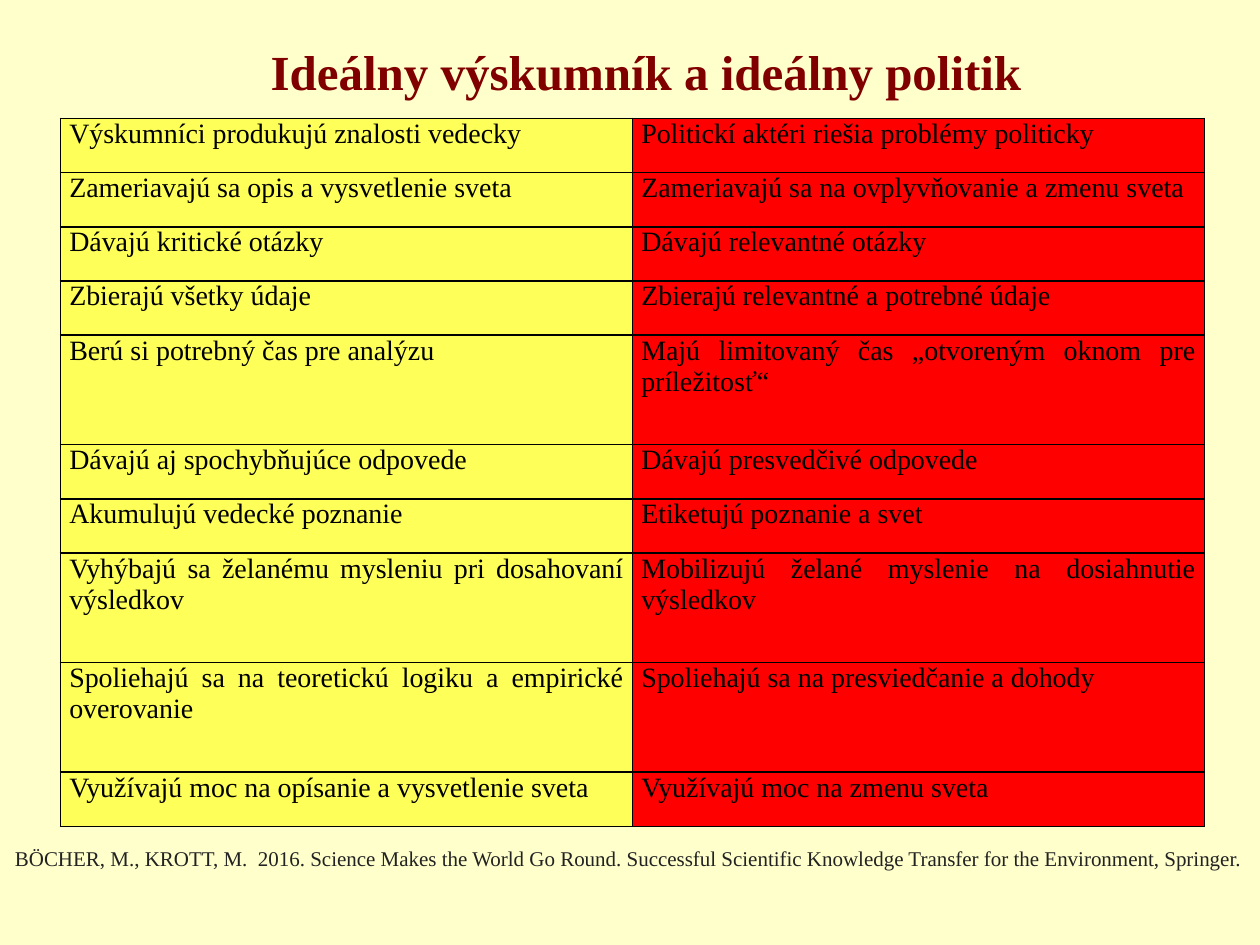
from pptx import Presentation
from pptx.dml.color import RGBColor
from pptx.enum.text import MSO_ANCHOR as Anchor, MSO_AUTO_SIZE as AutoSize, PP_ALIGN as Align
from pptx.oxml.ns import qn
from pptx.util import Inches, Pt
from lxml.etree import SubElement

COLORS = {
    "background": "FFFFCC",
    "title": "800000",
    "source": "222222",
    "text": "000000",
    "border": "000000",
    "researcher": "FFFF59",
    "politician": "FF0000",
}
FONT = "Times New Roman"
COLUMN_FILLS = ("researcher", "politician")
COLUMN_WIDTH = 4.54
ROW_HEIGHT, TALL_ROW_HEIGHT = 0.43, 0.87
TALL_ROWS = {4, 7, 8}

TITLE = "Ideálny výskumník a ideálny politik"
SOURCE = (
    "BÖCHER, M., KROTT, M.  2016. Science Makes the World Go Round. "
    "Successful Scientific Knowledge Transfer for the Environment, Springer."
)
COMPARISON = [
    ("Výskumníci produkujú znalosti vedecky", "Politickí aktéri riešia problémy politicky"),
    ("Zameriavajú sa opis a vysvetlenie sveta", "Zameriavajú sa na ovplyvňovanie a zmenu sveta"),
    ("Dávajú kritické otázky", "Dávajú relevantné otázky"),
    ("Zbierajú všetky údaje", "Zbierajú relevantné a potrebné údaje"),
    ("Berú si potrebný čas pre analýzu", "Majú limitovaný čas „otvoreným oknom pre príležitosť“"),
    ("Dávajú aj spochybňujúce odpovede", "Dávajú presvedčivé odpovede"),
    ("Akumulujú vedecké poznanie", "Etiketujú poznanie a svet"),
    ("Vyhýbajú sa želanému mysleniu pri dosahovaní výsledkov",
     "Mobilizujú želané myslenie na dosiahnutie výsledkov"),
    ("Spoliehajú sa na teoretickú logiku a empirické overovanie",
     "Spoliehajú sa na presviedčanie a dohody"),
    ("Využívajú moc na opísanie a vysvetlenie sveta", "Využívajú moc na zmenu sveta"),
]


def color(name):
    return RGBColor.from_string(COLORS[name])


def set_all(target, values):
    for name, value in values.items():
        setattr(target, name, value)


def write(frame, text, size, color_name, bold=False, align=Align.LEFT):
    para = frame.paragraphs[0]
    para.alignment = align
    span = para.add_run()
    span.text = text
    set_all(span.font, {"name": FONT, "size": Pt(size), "bold": bold})
    span.font.color.rgb = color(color_name)


def add_text(page, place, text, size, color_name, bold=False, **frame_format):
    box = page.shapes.add_textbox(*map(Inches, place))
    set_all(box.text_frame, {"word_wrap": True, **frame_format})
    write(box.text_frame, text, size, color_name, bold)


def add_borders(cell):
    properties = cell._tc.get_or_add_tcPr()
    for position, side in enumerate(("lnL", "lnR", "lnT", "lnB")):
        line = SubElement(properties, qn(f"a:{side}"), w=str(Pt(1)))
        fill = SubElement(line, qn("a:solidFill"))
        SubElement(fill, qn("a:srgbClr"), val=COLORS["border"])
        # Borders come before the fill in the cell properties
        properties.insert(position, line)


def fill_cell(cell, text, fill_name):
    set_all(cell, {
        "margin_left": Inches(0.07), "margin_right": Inches(0.07),
        "margin_top": 0, "margin_bottom": 0, "vertical_anchor": Anchor.TOP,
    })
    cell.fill.solid()
    cell.fill.fore_color.rgb = color(fill_name)
    write(cell.text_frame, text, 16, "text", align=Align.JUSTIFY)
    add_borders(cell)


def add_comparison(page, left, top):
    heights = [TALL_ROW_HEIGHT if i in TALL_ROWS else ROW_HEIGHT for i in range(len(COMPARISON))]
    width = COLUMN_WIDTH * len(COLUMN_FILLS)
    place = map(Inches, (left, top, width, sum(heights)))
    table = page.shapes.add_table(len(COMPARISON), len(COLUMN_FILLS), *place).table
    set_all(table, {"first_row": False, "horz_banding": False})
    for column in table.columns:
        column.width = Inches(COLUMN_WIDTH)
    for row, height, texts in zip(table.rows, heights, COMPARISON):
        row.height = Inches(height)
        for cell, text, fill_name in zip(row.cells, texts, COLUMN_FILLS):
            fill_cell(cell, text, fill_name)


def main():
    deck = Presentation()
    set_all(deck, {"slide_width": Inches(10), "slide_height": Inches(7.5)})
    page = deck.slides.add_slide(deck.slide_layouts[6])
    page.background.fill.solid()
    page.background.fill.fore_color.rgb = color("background")

    # Title
    add_text(page, (2.05, 0.23, 7.88, 0.71), TITLE, 28, "title", bold=True,
             margin_top=Inches(0.1), vertical_anchor=Anchor.TOP)
    # Source of the comparison
    add_text(page, (0.02, 6.66, 10, 0.3), SOURCE, 12, "source",
             auto_size=AutoSize.SHAPE_TO_FIT_TEXT)
    # Researcher and politician side by side
    add_comparison(page, 0.48, 0.94)

    deck.save("out.pptx")


if __name__ == "__main__":
    main()
